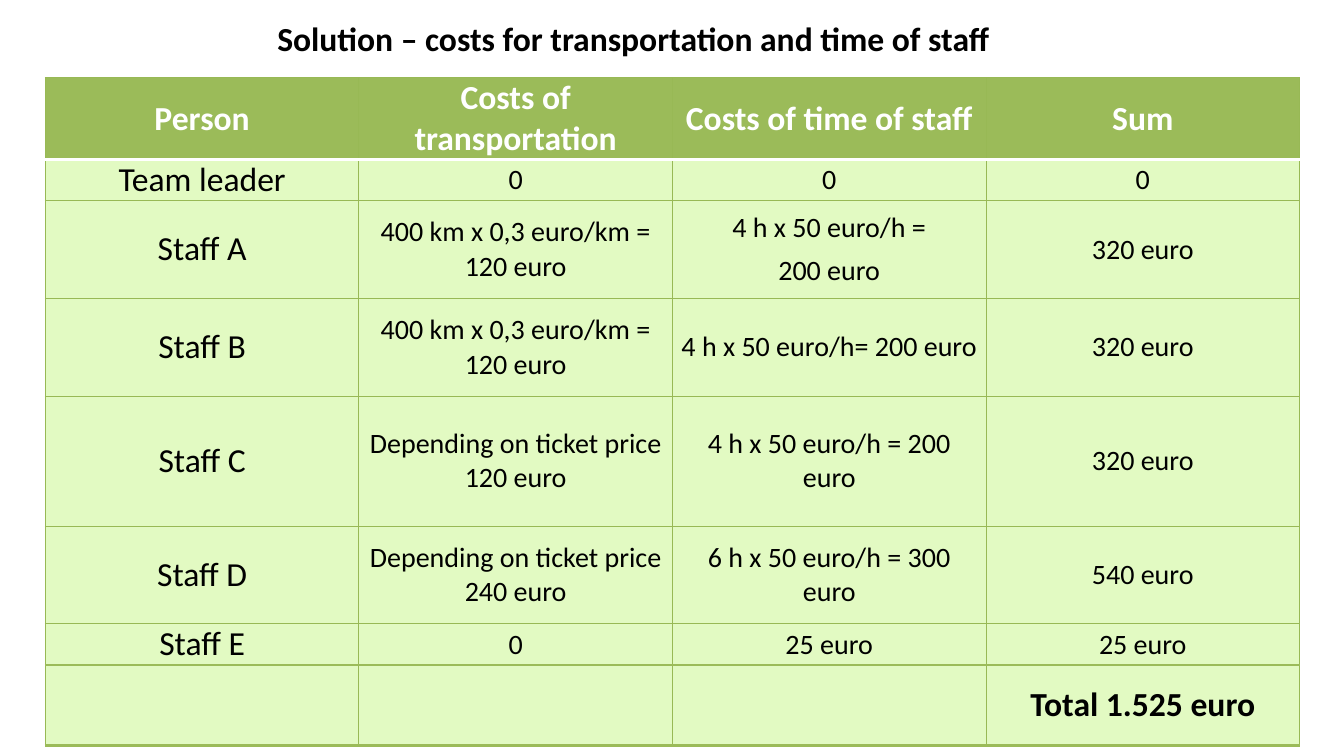
import pptx
import pptx.util
import pptx.dml.color
import pptx.enum.text
import pptx.oxml
import pptx.oxml.ns
from dataclasses import dataclass

Inches, Pt = pptx.util.Inches, pptx.util.Pt
Align = pptx.enum.text.PP_ALIGN
Anchor = pptx.enum.text.MSO_ANCHOR

TITLE = "Solution – costs for transportation and time of staff"
ROWS = [
    ("Person", "Costs of transportation", "Costs of time of staff", "Sum"),
    ("Team leader", "0", "0", "0"),
    ("Staff A", "400 km x 0,3 euro/km = 120 euro",
     "4 h x 50 euro/h =\n200 euro", "320 euro"),
    ("Staff B", "400 km x 0,3 euro/km = 120 euro",
     "4 h x 50 euro/h= 200 euro", "320 euro"),
    ("Staff C", "Depending on ticket price 120 euro",
     "4 h x 50 euro/h = 200 euro", "320 euro"),
    ("Staff D", "Depending on ticket price 240 euro",
     "6 h x 50 euro/h = 300 euro", "540 euro"),
    ("Staff E", "0", "25 euro", "25 euro"),
    ("", "", "", "Total 1.525 euro"),
]
HEIGHTS = [0.77, 0.38, 0.97, 0.97, 1.29, 0.97, 0.38, 0.8]
WIDE, HIGH = 13.33, 7.5
LEFT, TOP, COL = 0.45, 0.77, 3.11
LAST = len(ROWS) - 1


@dataclass
class Theme:
    font: str = "Calibri"
    large: int = 24
    small: int = 20
    ink: str = "000000"
    white: str = "FFFFFF"
    head: str = "9BBB59"
    body: str = "E2FAC2"
    grid: str = "98B955"
    thin: float = 0.75
    thick: float = 2


theme = Theme()


def color(code):
    return pptx.dml.color.RGBColor.from_string(code)


def style(para, size, ink, bold):
    for run in para.runs:
        run.font.name = theme.font
        run.font.size = Pt(size)
        run.font.bold = bold
        run.font.color.rgb = color(ink)


def rule(row):
    """Colour and width of the horizontal line above a row."""
    if row == 1:
        return theme.white, theme.thick
    if row >= LAST:
        return theme.head, theme.thick
    return theme.grid, theme.thin


def border(cell, row):
    side = (theme.grid, theme.thin)
    edges = {"L": side, "R": side, "T": rule(row), "B": rule(row + 1)}
    props = cell._tc.get_or_add_tcPr()
    for spot, (edge, (ink, width)) in enumerate(edges.items()):
        props.insert(spot, pptx.oxml.parse_xml(
            f'<a:ln{edge} {pptx.oxml.ns.nsdecls("a")} w="{Pt(width)}">'
            f'<a:solidFill><a:srgbClr val="{ink}"/></a:solidFill></a:ln{edge}>'))


def fill(cell, text, row, col):
    head, total = row == 0, row == LAST
    cell.fill.solid()
    cell.fill.fore_color.rgb = color(theme.head if head else theme.body)
    border(cell, row)
    cell.vertical_anchor = Anchor.MIDDLE
    cell.margin_left = cell.margin_right = Inches(0.07)
    cell.margin_top = cell.margin_bottom = 0
    cell.text_frame.text = text
    size = theme.large if head or total or col == 0 else theme.small
    for para in cell.text_frame.paragraphs:
        para.alignment = Align.CENTER
        para.space_after = Pt(6)
        style(para, size, theme.white if head else theme.ink, head or total)


def main():
    deck = pptx.Presentation()
    deck.slide_width, deck.slide_height = Inches(WIDE), Inches(HIGH)
    slide = deck.slides.add_slide(deck.slide_layouts[5])

    title = slide.shapes.title
    title.left, title.top = Inches(2.65), Inches(0.13)
    title.width, title.height = Inches(7.8), Inches(0.5)
    frame = title.text_frame
    frame.text = TITLE
    frame.word_wrap = True
    frame.vertical_anchor = Anchor.TOP
    frame.paragraphs[0].alignment = Align.LEFT
    style(frame.paragraphs[0], theme.large, theme.ink, True)

    cols = len(ROWS[0])
    table = slide.shapes.add_table(
        len(ROWS), cols, Inches(LEFT), Inches(TOP),
        Inches(COL * cols), Inches(sum(HEIGHTS))).table
    table.horz_banding = False
    for row, (texts, height) in enumerate(zip(ROWS, HEIGHTS)):
        table.rows[row].height = Inches(height)
        for col, text in enumerate(texts):
            fill(table.cell(row, col), text, row, col)

    deck.save("out.pptx")


if __name__ == "__main__":
    main()
